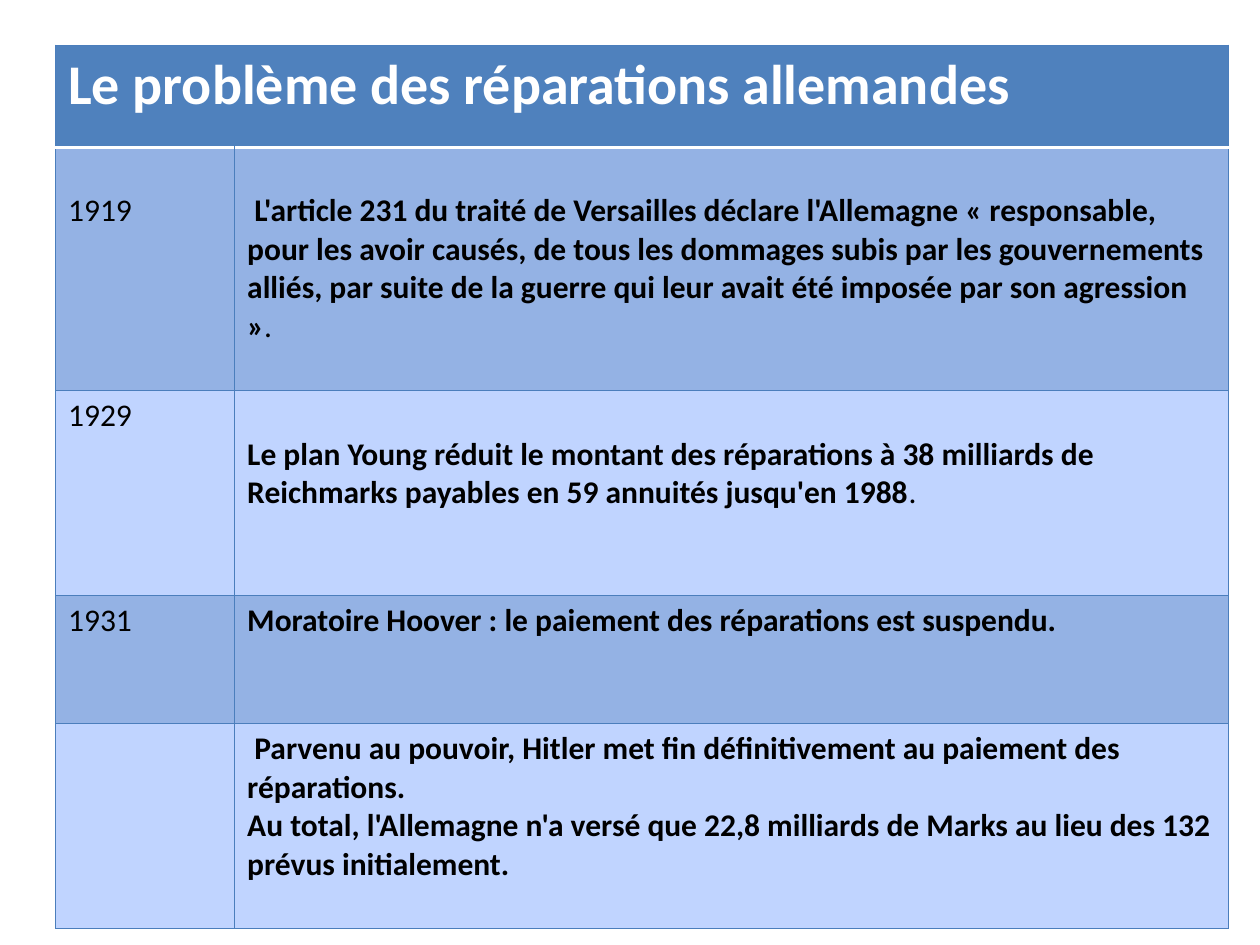
"""Build a slide with a dated table on German war reparations."""
from lxml import etree
from pptx import Presentation
from pptx.dml.color import RGBColor
from pptx.oxml.ns import qn
from pptx.util import Cm, Pt

COLORS = {"header": "4F81BD", "dark": "94B2E4", "light": "C0D4FF",
          "border": "4B7EBC", "white": "FFFFFF", "black": "000000"}
FONT = "Calibri"
TITLE = "Le problème des réparations allemandes"
EVENTS = [
    {"height": 4.9, "year": "1919", "year_top": 0.9, "text_top": 0.9, "paras": [
        (" L'article 231 du traité de Versailles déclare l'Allemagne « responsable, "
         "pour les avoir causés, de tous les dommages subis par les gouvernements "
         "alliés, par suite de la guerre qui leur avait été imposée par son "
         "agression »", ".")]},
    {"height": 4.13, "year": "1929", "year_top": 0.13, "text_top": 0.9, "paras": [
        ("Le plan Young réduit le montant des réparations à 38 milliards de "
         "Reichmarks payables en 59 annuités jusqu'en 1988", ".")]},
    {"height": 2.58, "year": "1931", "year_top": 0.13, "text_top": 0.13, "paras": [
        ("Moratoire Hoover : le paiement des réparations est suspendu.", "")]},
    {"height": 4.13, "year": "", "year_top": 0.13, "text_top": 0.13, "paras": [
        (" Parvenu au pouvoir, Hitler met fin définitivement au paiement des "
         "réparations.", ""),
        ("Au total, l'Allemagne n'a versé que 22,8 milliards de Marks au lieu des "
         "132 prévus initialement.", "")]},
]
LEFT, TOP = 1.12, 0.91
WIDTHS = [3.61, 20.04]
HEADER_HEIGHT = 2.06


def add_span(para, text, size=18, bold=False, color="black"):
    """Add formatted text to a paragraph."""
    span = para.add_run()
    span.text = text
    span.font.name = FONT
    span.font.size = Pt(size)
    span.font.bold = bold
    span.font.color.rgb = RGBColor.from_string(COLORS[color])


def style_cell(cell, fill, top=0.13, white_edge=None):
    """Set the fill, top margin and borders of a cell."""
    cell.margin_top = Cm(top)
    cell.fill.solid()
    cell.fill.fore_color.rgb = RGBColor.from_string(COLORS[fill])
    properties = cell._tc.get_or_add_tcPr()
    for index, edge in enumerate(("lnL", "lnR", "lnT", "lnB")):
        color, width = ("white", 2) if edge == white_edge else ("border", 0.75)
        line = etree.Element(qn("a:" + edge), w=str(Pt(width)))
        solid = etree.SubElement(line, qn("a:solidFill"))
        etree.SubElement(solid, qn("a:srgbClr"), val=COLORS[color])
        properties.insert(index, line)


def main():
    """Create and save the deck."""
    deck = Presentation()
    deck.slide_width, deck.slide_height = Cm(25.4), Cm(19.05)
    page = deck.slides.add_slide(deck.slide_layouts[6])
    heights = [HEADER_HEIGHT] + [event["height"] for event in EVENTS]
    table = page.shapes.add_table(len(heights), len(WIDTHS), Cm(LEFT), Cm(TOP),
                                  Cm(sum(WIDTHS)), Cm(sum(heights))).table
    table.horz_banding = False
    for column, width in zip(table.columns, WIDTHS):
        column.width = Cm(width)
    for row, height in zip(table.rows, heights):
        row.height = Cm(height)

    header = table.cell(0, 0)
    header.merge(table.cell(0, 1))
    for cell in table.rows[0].cells:
        style_cell(cell, "header", white_edge="lnB")
    add_span(header.text_frame.paragraphs[0], TITLE, size=32, bold=True, color="white")

    for number, event in enumerate(EVENTS, start=1):
        fill = "dark" if number % 2 else "light"
        edge = "lnT" if number == 1 else None
        year_cell, text_cell = table.cell(number, 0), table.cell(number, 1)
        style_cell(year_cell, fill, event["year_top"], edge)
        style_cell(text_cell, fill, event["text_top"], edge)
        if event["year"]:
            add_span(year_cell.text_frame.paragraphs[0], event["year"])
        frame = text_cell.text_frame
        for index, (strong, plain) in enumerate(event["paras"]):
            para = frame.add_paragraph() if index else frame.paragraphs[0]
            add_span(para, strong, bold=True)
            if plain:
                add_span(para, plain)
    deck.save("out.pptx")


if __name__ == "__main__":
    main()
